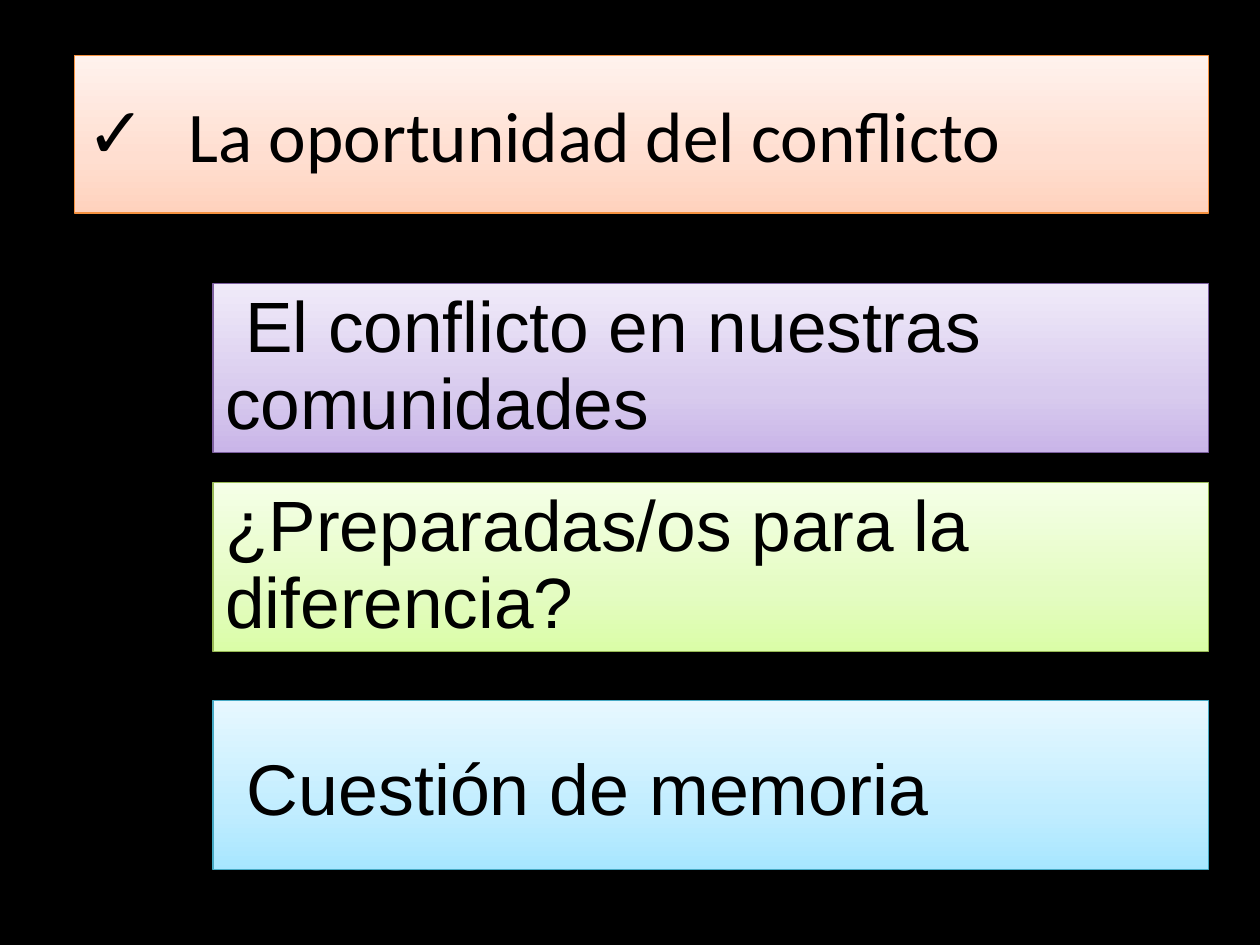
from copy import deepcopy

from lxml.etree import SubElement
from pptx import Presentation
from pptx.dml.color import RGBColor
from pptx.enum.shapes import MSO_SHAPE
from pptx.enum.text import MSO_ANCHOR, PP_ALIGN
from pptx.oxml.ns import qn
from pptx.util import Inches, Pt


def color(hex_code):
    return RGBColor.from_string(hex_code)


def fill_upwards(shape, hex_codes):
    """Fill with a three-stop gradient that runs from bottom to top."""
    shape.fill.gradient()
    shape.fill.gradient_angle = 90
    stop_list = shape.element.spPr.find(qn("a:gradFill")).find(qn("a:gsLst"))
    stop_list.insert(1, deepcopy(stop_list[0]))
    for stop, position, hex_code in zip(shape.fill.gradient_stops, (0, 0.35, 1), hex_codes):
        stop.position = position
        stop.color.rgb = color(hex_code)


deck = Presentation()
deck.slide_width, deck.slide_height = Inches(10), Inches(7.5)
page = deck.slides.add_slide(deck.slide_layouts[6])
page.background.fill.solid()
page.background.fill.fore_color.rgb = color("000000")

RIGHT_EDGE = 9.59
TITLE_LEFT, TOPIC_LEFT = 0.59, 1.69
TITLE_HEIGHT, TOPIC_HEIGHT = 1.25, 1.34
BULLET_INDENT = Inches(0.81)

# left, top, height, gradient, outline, font, line spacing, runs (text, size)
bands = [
    (TITLE_LEFT, 0.44, TITLE_HEIGHT, ("FFD2BD", "FFDED0", "FFF2ED"), "F69240",
     "Calibri", 1.0, [("La oportunidad del conflicto", 40.7)]),
    (TOPIC_LEFT, 2.25, TOPIC_HEIGHT, ("C9B5E8", "D8CBEE", "F0EAF9"), "7D60A0",
     "Arial", 0.9, [(" El conflicto en nuestras comunidades", 40.7)]),
    (TOPIC_LEFT, 3.83, TOPIC_HEIGHT, ("DAFDA7", "E4FCC2", "F5FFE7"), "98B955",
     "Arial", 0.9, [("¿Preparadas/os para la diferencia?", 40.7)]),
    (TOPIC_LEFT, 5.56, TOPIC_HEIGHT, ("A7E6FF", "C1EDFF", "E7F8FF"), "46AAC5",
     "Arial", 1.0, [(" ", 44), ("Cuestión de memoria", 41)]),
]

for left, top, height, gradient, outline, font, spacing, runs in bands:
    box = page.shapes.add_shape(
        MSO_SHAPE.RECTANGLE,
        Inches(left), Inches(top), Inches(RIGHT_EDGE - left), Inches(height),
    )
    box.shadow.inherit = False
    fill_upwards(box, gradient)
    box.line.color.rgb = color(outline)
    box.line.width = Pt(0.75)

    frame = box.text_frame
    frame.word_wrap = True
    frame.vertical_anchor = MSO_ANCHOR.MIDDLE
    para = frame.paragraphs[0]
    para.alignment = PP_ALIGN.LEFT
    para.line_spacing = spacing
    for text, size in runs:
        span = para.add_run()
        span.text = text
        span.font.name = font
        span.font.size = Pt(size)
        span.font.color.rgb = color("000000")

    if left == TITLE_LEFT:
        properties = para._p.get_or_add_pPr()
        properties.set("marL", str(BULLET_INDENT))
        properties.set("indent", str(-BULLET_INDENT))
        SubElement(properties, qn("a:buFont")).set("typeface", "Arial")
        SubElement(properties, qn("a:buChar")).set("char", "✓")

deck.save("out.pptx")
